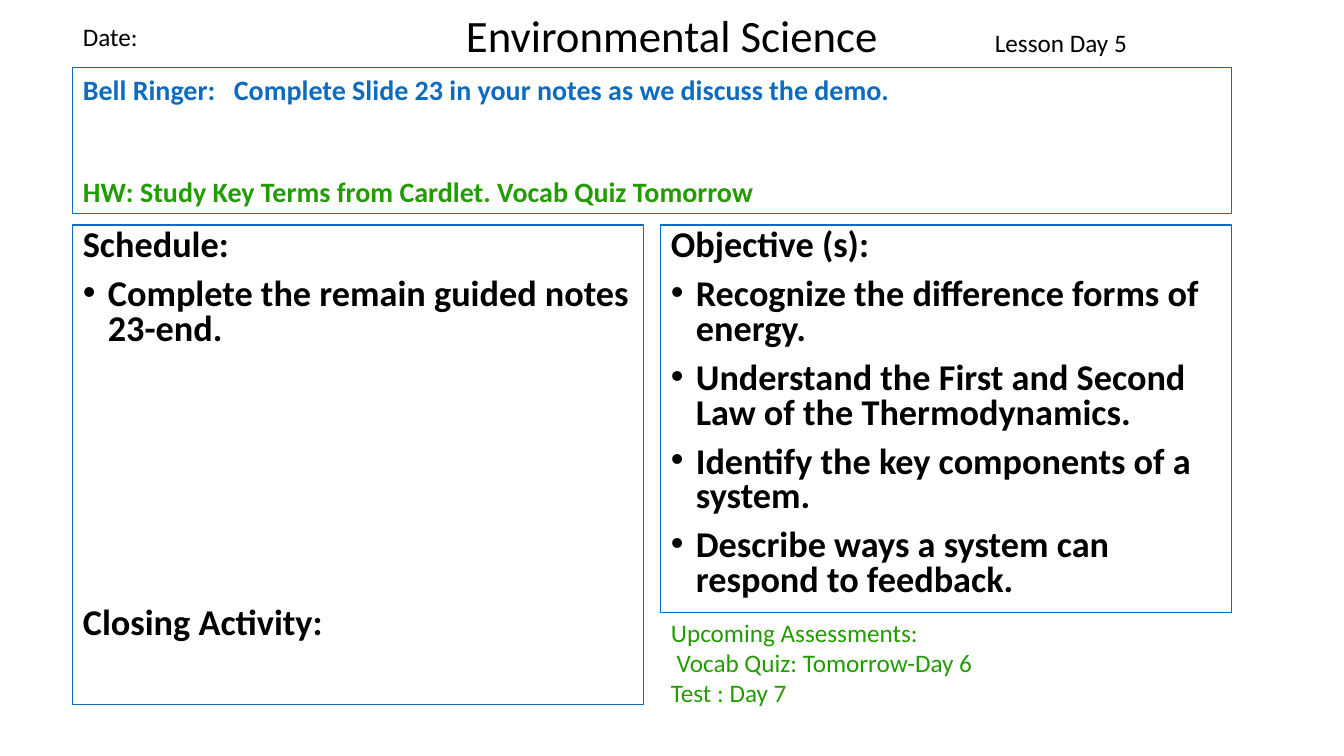
from dataclasses import dataclass

from lxml.etree import SubElement
from pptx import Presentation
from pptx.dml.color import RGBColor
from pptx.enum.shapes import MSO_SHAPE
from pptx.enum.text import MSO_ANCHOR, MSO_AUTO_SIZE, PP_ALIGN
from pptx.oxml.ns import qn
from pptx.shapes.autoshape import Shape
from pptx.slide import Slide
from pptx.text.text import _Paragraph
from pptx.util import Emu, Pt

EMU_PER_PX = 9144000 / 1008
COLORS = {"blue": "0D6CBF", "green": "229C00", "black": "000000"}
FONT = "Calibri"
LEFT, RIGHT = 73, 661
COLUMN_WIDTH = 571
COLUMN_TOP = 225


@dataclass(frozen=True)
class Line:
    text: str
    size: float = 18
    color: str = "black"
    bold: bool = False
    bullet: bool = False
    before: float = 0
    spacing: float = 1.0
    tab: int = 0
    align: PP_ALIGN = PP_ALIGN.LEFT


@dataclass(frozen=True)
class Block:
    left: int
    top: int
    width: int
    height: int
    lines: tuple[Line, ...]
    framed: bool = False


def px(length: int) -> Emu:
    return Emu(round(length * EMU_PER_PX))


def agenda(text: str, bullet: bool = True, before: float = 10) -> Line:
    return Line(text, 25.9, bold=True, bullet=bullet, before=before, spacing=0.8)


def format_line(paragraph: _Paragraph, line: Line) -> None:
    paragraph.alignment = line.align
    paragraph.line_spacing = line.spacing
    paragraph.space_before = Pt(line.before)
    properties = paragraph._p.get_or_add_pPr()
    if line.bullet:
        properties.set("marL", str(px(25)))
        properties.set("indent", str(px(-25)))
        SubElement(properties, qn("a:buFont"), typeface="Arial")
        SubElement(properties, qn("a:buChar"), char="•")
    if line.tab:
        stops = SubElement(properties, qn("a:tabLst"))
        SubElement(stops, qn("a:tab"), pos=str(px(line.tab)), algn="l")
    run = paragraph.add_run()
    run.text = line.text
    run.font.name = FONT
    run.font.size = Pt(line.size)
    run.font.bold = line.bold
    run.font.color.rgb = RGBColor.from_string(COLORS[line.color])


def fill_block(shape: Shape, block: Block) -> None:
    """Place the shape and write its lines."""
    shape.left, shape.top = px(block.left), px(block.top)
    shape.width, shape.height = px(block.width), px(block.height)
    frame = shape.text_frame
    frame.word_wrap = True
    frame.auto_size = MSO_AUTO_SIZE.NONE
    frame.vertical_anchor = MSO_ANCHOR.TOP
    for index, line in enumerate(block.lines):
        paragraph = frame.add_paragraph() if index else frame.paragraphs[0]
        format_line(paragraph, line)


def add_block(slide: Slide, block: Block) -> None:
    area = px(block.left), px(block.top), px(block.width), px(block.height)
    if block.framed:
        shape = slide.shapes.add_shape(MSO_SHAPE.RECTANGLE, *area)
        shape.shadow.inherit = False
        shape.fill.background()
        shape.line.color.rgb = RGBColor.from_string(COLORS["blue"])
        shape.line.width = Pt(0.75)
    else:
        shape = slide.shapes.add_textbox(*area)
    fill_block(shape, block)


HEADING = Block(423, 3, 498, 65, (
    Line("Environmental Science", 32, align=PP_ALIGN.CENTER),
))
BLOCKS = (
    Block(LEFT, COLUMN_TOP, COLUMN_WIDTH, 480, (
        agenda("Schedule:", bullet=False),
        agenda("Complete the remain guided notes 23-end."),
        agenda("Closing Activity:", bullet=False, before=185),
    ), framed=True),
    Block(RIGHT, COLUMN_TOP, COLUMN_WIDTH, 388, (
        agenda("Objective (s):", bullet=False),
        agenda("Recognize the difference forms of energy."),
        agenda("Understand the First and Second Law of the Thermodynamics."),
        agenda("Identify the key components of a system."),
        agenda("Describe ways a system can respond to feedback."),
    ), framed=True),
    Block(LEFT, 16, 350, 40, (Line("Date:"),)),
    Block(LEFT, 68, RIGHT + COLUMN_WIDTH - LEFT, 146, (
        Line("Bell Ringer:\tComplete Slide 23 in your notes as we discuss the demo.",
             20, "blue", bold=True, tab=151),
        Line("HW: Study Key Terms from Cardlet. Vocab Quiz Tomorrow",
             20, "green", bold=True, before=48.8),
    ), framed=True),
    Block(RIGHT, 612, COLUMN_WIDTH, 102, (
        Line("Upcoming Assessments:", color="green"),
        Line(" Vocab Quiz: Tomorrow-Day 6", color="green"),
        Line("Test : Day 7", color="green"),
    )),
    Block(985, 22, 191, 40, (Line("Lesson Day 5"),)),
)


def main() -> None:
    presentation = Presentation()
    presentation.slide_width, presentation.slide_height = px(1344), px(756)
    slide = presentation.slides.add_slide(presentation.slide_layouts[5])
    fill_block(slide.shapes.title, HEADING)
    for block in BLOCKS:
        add_block(slide, block)
    presentation.save("out.pptx")


if __name__ == "__main__":
    main()
